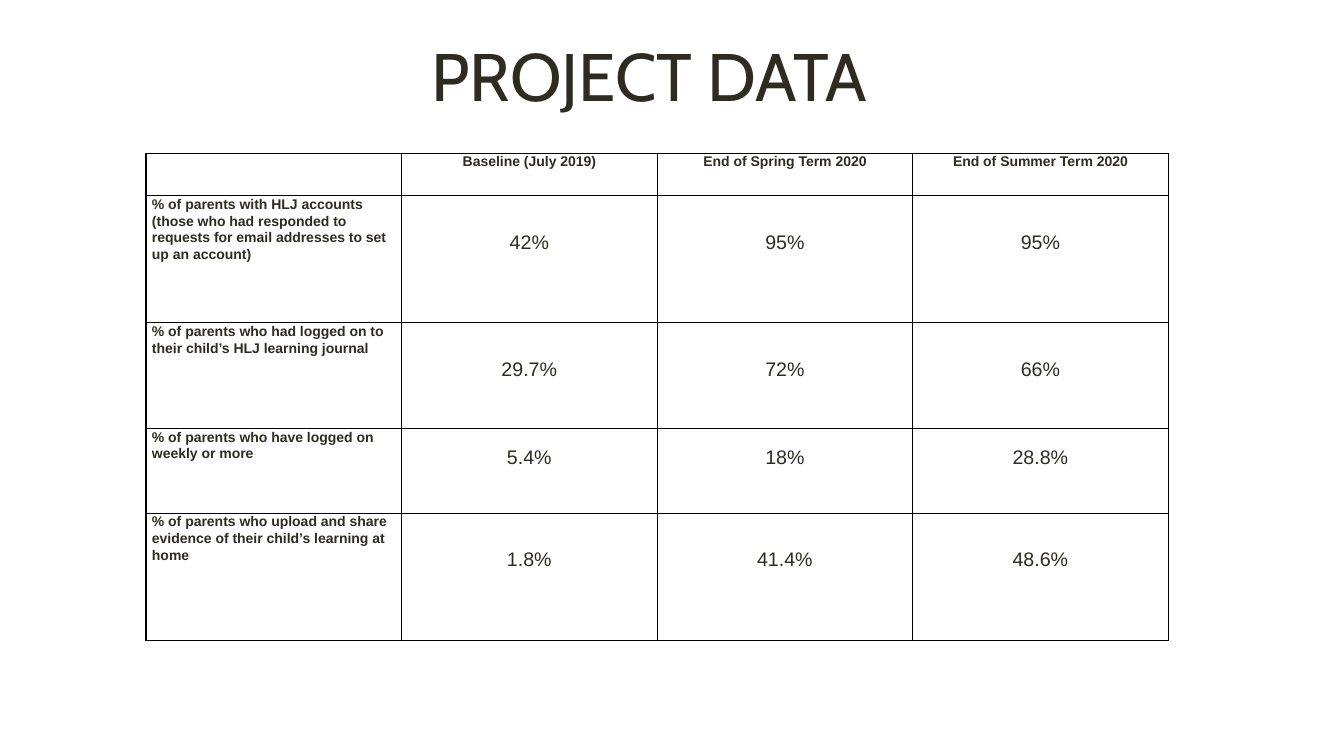
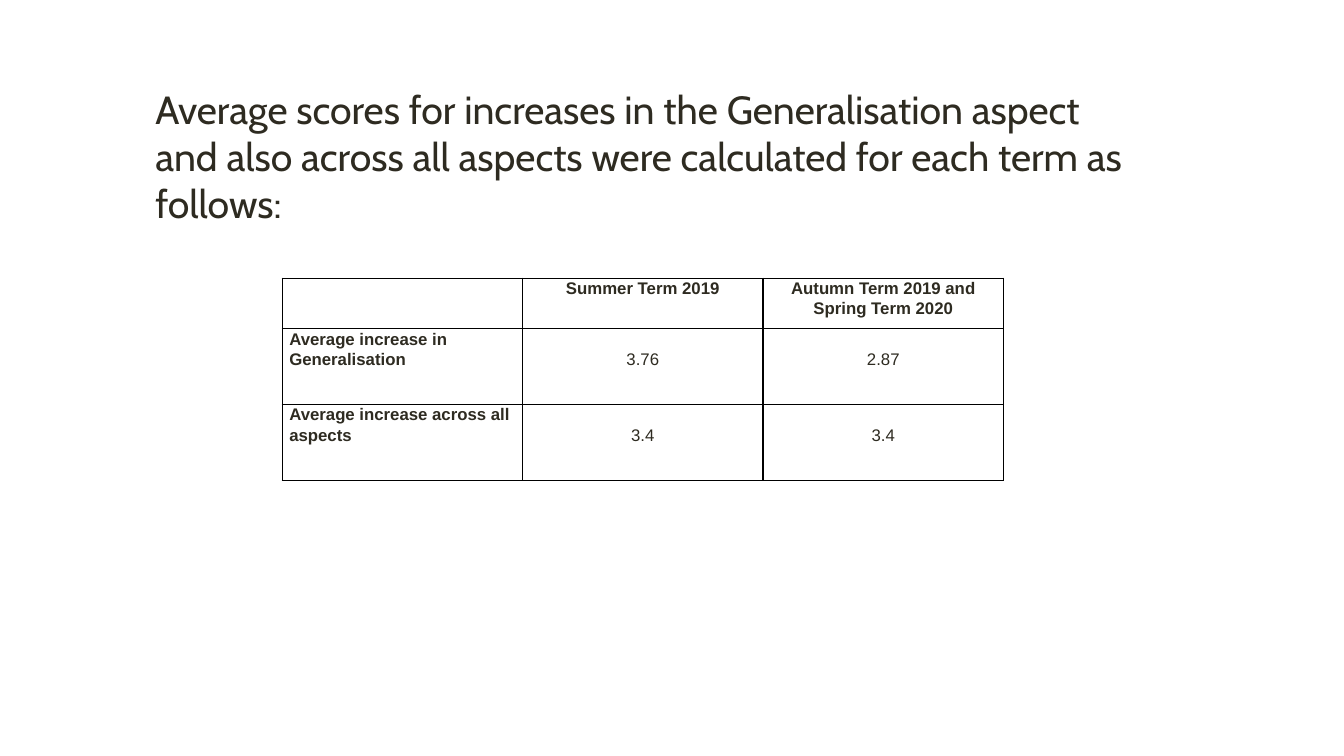
from lxml.etree import SubElement
from pptx import Presentation
from pptx.dml.color import RGBColor
from pptx.enum.text import MSO_ANCHOR, MSO_AUTO_SIZE, PP_ALIGN
from pptx.oxml.ns import qn
from pptx.util import Cm, Pt

INK = "2E2B21"
RULE = "000000"


def style(para, face, size, align, bold=False):
    para.alignment = align
    for run in para.runs:
        font = run.font
        font.name, font.size, font.bold = face, Pt(size), bold
        font.color.rgb = RGBColor.from_string(INK)


def frame(cell):
    """Draw a thin line on all four sides of a cell."""
    props = cell._tc.get_or_add_tcPr()
    for side in ("lnL", "lnR", "lnT", "lnB"):
        line = SubElement(props, qn(f"a:{side}"), w=str(Pt(1)))
        fill = SubElement(line, qn("a:solidFill"))
        SubElement(fill, qn("a:srgbClr"), val=RULE)


# title: text, box in cm, size, alignment
# table: left, top, column width, row heights, side margin in cm;
# label and value sizes; drop of the values in each row in cm
pages = [
    dict(
        title="PROJECT DATA",
        box=(9.07, 0.74, 14.58, 2.31), size=48, align=PP_ALIGN.CENTER,
        left=3.68, top=3.86, width=6.44, side=0.15,
        heights=[1.07, 3.2, 2.67, 2.13, 3.2],
        label=10, value=14, drops=[0, 0.87, 0.87, 0.43, 0.87],
        rows=[
            ["", "Baseline (July 2019)", "End of Spring Term 2020",
             "End of Summer Term 2020"],
            ["% of parents with HLJ accounts (those who had responded to "
             "requests for email addresses to set up an account)",
             "42%", "95%", "95%"],
            ["% of parents who had logged on to their child’s HLJ "
             "learning journal", "29.7%", "72%", "66%"],
            ["% of parents who have logged on weekly or more",
             "5.4%", "18%", "28.8%"],
            ["% of parents who upload and share evidence of their child’s "
             "learning at home", "1.8%", "41.4%", "48.6%"],
        ],
    ),
    dict(
        title="Average scores for increases in the Generalisation aspect "
              "and also across all aspects were calculated for each term "
              "as follows:",
        box=(3.66, 2.03, 25.45, 3.8), size=28, align=PP_ALIGN.LEFT,
        left=7.11, top=7.01, width=6.06, side=0.18,
        heights=[1.27, 1.91, 1.91],
        label=12, value=12, drops=[0, 0.52, 0.52],
        rows=[
            ["", "Summer Term 2019", "Autumn Term 2019 and Spring Term 2020"],
            ["Average increase in Generalisation", "3.76", "2.87"],
            ["Average increase across all aspects", "3.4", "3.4"],
        ],
    ),
]

deck = Presentation()
deck.slide_width, deck.slide_height = Cm(33.87), Cm(19.05)

for page in pages:
    slide = deck.slides.add_slide(deck.slide_layouts[5])

    title = slide.shapes.title
    title.left, title.top, title.width, title.height = map(Cm, page["box"])
    text = title.text_frame
    text.text = page["title"]
    text.word_wrap = True
    text.auto_size = MSO_AUTO_SIZE.NONE
    text.vertical_anchor = MSO_ANCHOR.TOP
    style(text.paragraphs[0], "Cabin", page["size"], page["align"])

    rows, heights = page["rows"], page["heights"]
    count = len(rows[0])
    table = slide.shapes.add_table(
        len(rows), count, Cm(page["left"]), Cm(page["top"]),
        Cm(page["width"] * count), Cm(sum(heights))).table
    table.first_row = table.horz_banding = False
    for col in table.columns:
        col.width = Cm(page["width"])

    for r, row in enumerate(rows):
        table.rows[r].height = Cm(heights[r])
        for c, words in enumerate(row):
            head = r == 0 or c == 0
            cell = table.cell(r, c)
            frame(cell)
            cell.fill.background()
            cell.margin_left = cell.margin_right = Cm(page["side"])
            cell.margin_top = Cm(0 if head else page["drops"][r])
            cell.margin_bottom = 0
            cell.text_frame.text = words
            para = cell.text_frame.paragraphs[0]
            para.line_spacing = 1.07
            style(para, "Arial", page["label" if head else "value"],
                  PP_ALIGN.CENTER if c else PP_ALIGN.LEFT, head)

deck.save("out.pptx")
